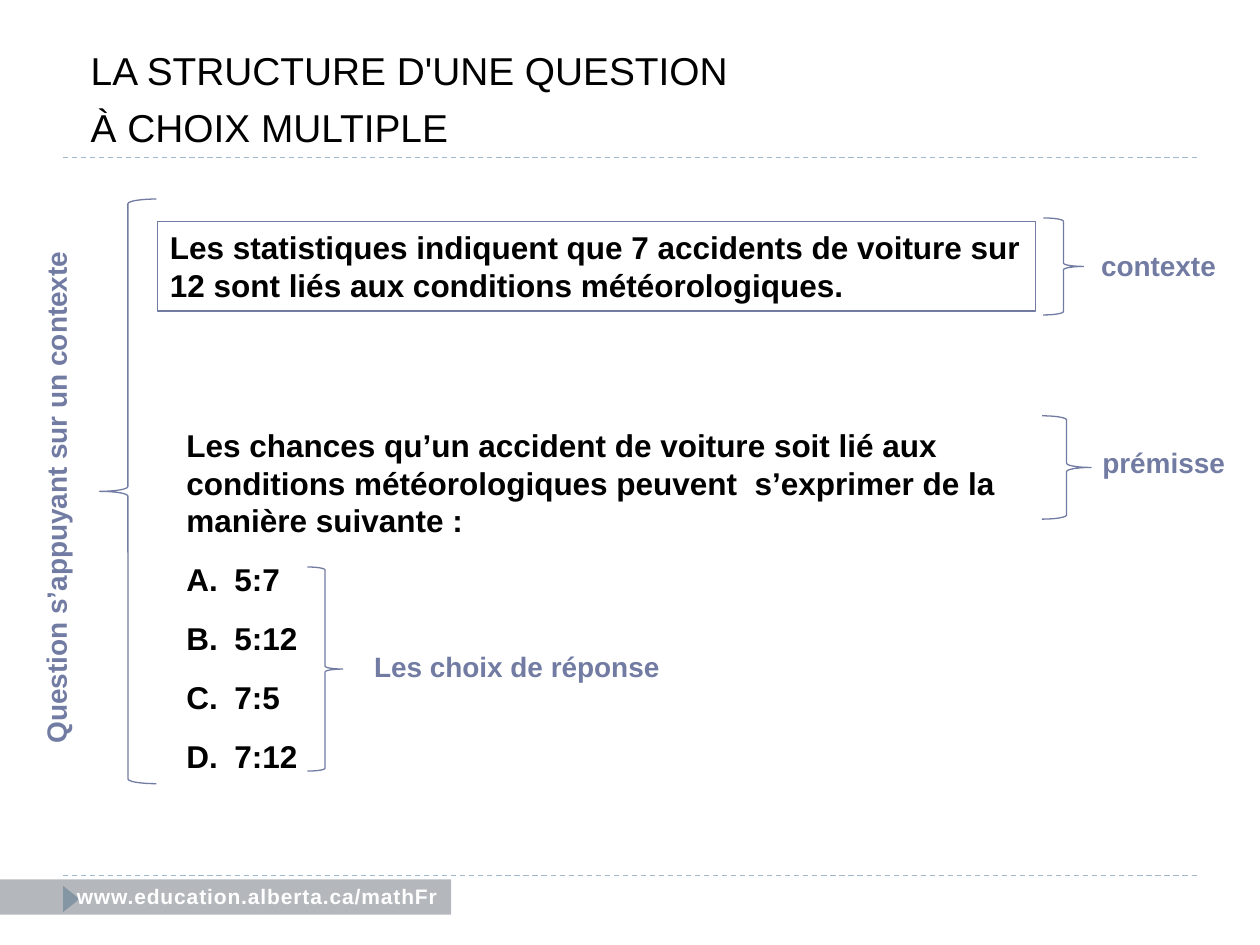
import pptx
import pptx.util
import pptx.dml.color
import pptx.enum.dml
import pptx.enum.shapes
import pptx.enum.text
import pptx.oxml
import pptx.oxml.ns

WIDTH, HEIGHT = 10, 7.5
COLORS = {"accent": "727CA3", "rule": "9FB8CD", "footer": "6A737B",
          "text": "000000", "white": "FFFFFF"}
SHAPES = pptx.enum.shapes.MSO_SHAPE
MARGIN = 0.05 * WIDTH
LIST_INDENT = 0.38


def inches(*lengths):
    return [pptx.util.Inches(length) for length in lengths]


def color(name):
    return pptx.dml.color.RGBColor.from_string(COLORS[name])


def add_xml(parent, tag, **attributes):
    child = pptx.oxml.parse_xml(f"<a:{tag} {pptx.oxml.ns.nsdecls('a')}/>")
    for key, value in attributes.items():
        child.set(key, value)
    parent.append(child)
    return child


def style(para, size, name, bold=True):
    para.alignment = pptx.enum.text.PP_ALIGN.LEFT
    font = para.font
    font.name, font.size, font.bold = "Arial", pptx.util.Pt(size), bold
    font.color.rgb = color(name)


def set_frame(frame, inset=None):
    frame.word_wrap = True
    frame.auto_size = pptx.enum.text.MSO_AUTO_SIZE.NONE
    frame.vertical_anchor = pptx.enum.text.MSO_ANCHOR.TOP
    if inset is not None:
        frame.margin_left = frame.margin_right = inset
        frame.margin_top = frame.margin_bottom = inset


def move(box, place):
    box.left, box.top, box.width, box.height = inches(*place)


def add_rule(page, y):
    rule = page.shapes.add_connector(
        pptx.enum.shapes.MSO_CONNECTOR.STRAIGHT,
        *inches(MARGIN, y, WIDTH - MARGIN, y))
    rule.line.color.rgb = color("rule")
    rule.line.width = pptx.util.Pt(0.75)
    rule.line.dash_style = pptx.enum.dml.MSO_LINE.DASH
    add_xml(rule._element.spPr, "effectLst")


def add_outline(page, kind, place):
    shape = page.shapes.add_shape(kind, *inches(*place))
    shape.shadow.inherit = False
    shape.fill.background()
    shape.line.color.rgb = color("accent")
    shape.line.width = pptx.util.Pt(0.75)
    return shape


def add_solid(page, kind, place, name):
    shape = page.shapes.add_shape(kind, *inches(*place))
    shape.shadow.inherit = False
    shape.fill.solid()
    shape.fill.fore_color.rgb = color(name)
    shape.line.fill.background()
    return shape


def add_label(page, text, place, size=16, name="accent", inset=None):
    box = page.shapes.add_textbox(*inches(*place))
    set_frame(box.text_frame, inset)
    box.text_frame.text = text
    style(box.text_frame.paragraphs[0], size, name)
    return box


def fill_title(box, lines):
    move(box, (0.72, 0.37, 9, 0.8))
    set_frame(box.text_frame, 0)
    box.text_frame.text = "\n".join(lines)
    for index, para in enumerate(box.text_frame.paragraphs):
        para.space_before = pptx.util.Pt(6 if index else 0)
        style(para, 22.2, "text", bold=False)


def fill_question(box, stem, choices):
    move(box, (1.38, 3.33, 6.81, 2.89))
    set_frame(box.text_frame)
    box.text_frame.text = "\n".join([stem] + choices)
    for index, para in enumerate(box.text_frame.paragraphs):
        para.space_before = pptx.util.Pt(0)
        para.space_after = pptx.util.Pt(12)
        properties = para._p.get_or_add_pPr()
        indent = pptx.util.Inches(LIST_INDENT) if index else 0
        properties.set("marL", str(indent))
        properties.set("indent", str(-indent))
        if index:
            add_xml(properties, "buFont", typeface="Arial")
            add_xml(properties, "buAutoNum", type="alphaUcPeriod")
        else:
            add_xml(properties, "buNone")
        style(para, 18, "text")


def add_footer(page):
    pointer = add_solid(page, SHAPES.ISOSCELES_TRIANGLE,
                        (0.46, 7.07, 0.21, 0.13), "rule")
    pointer.rotation = 90
    band = add_solid(page, SHAPES.RECTANGLE, (0, 6.98, 3.58, 0.28), "footer")
    tint = band.fill._xPr.find(".//" + pptx.oxml.ns.qn("a:srgbClr"))
    add_xml(tint, "alpha", val="50000")
    address = add_label(page, "www.education.alberta.ca/mathFr",
                        (0.61, 7.01, 2.97, 0.2), 12, "white", inset=0)
    span = address.text_frame.paragraphs[0].runs[0]
    span._r.get_or_add_rPr().set("spc", "50")


def main():
    deck = pptx.Presentation()
    deck.slide_width, deck.slide_height = inches(WIDTH, HEIGHT)
    page = deck.slides.add_slide(deck.slide_layouts[1])

    # Rules and footer
    for y in (1.25, 6.95):
        add_rule(page, y)
    add_footer(page)

    # Title and question
    fill_title(page.shapes.title,
               ["LA STRUCTURE D'UNE QUESTION", "À CHOIX MULTIPLE"])
    fill_question(
        page.placeholders[1],
        "Les chances qu’un accident de voiture soit lié aux conditions "
        "météorologiques peuvent  s’exprimer de la manière suivante :",
        ["5:7", "5:12", "7:5", "7:12"])

    # Context statement
    context = add_outline(page, SHAPES.RECTANGLE, (1.25, 1.76, 6.97, 0.71))
    set_frame(context.text_frame)
    context.text_frame.text = (
        "Les statistiques indiquent que 7 accidents de voiture sur 12 "
        "sont liés aux conditions météorologiques.")
    style(context.text_frame.paragraphs[0], 18, "text")

    # Braces with the names of the parts
    for text, brace, place in (
            ("contexte", (8.28, 1.73, 0.32, 0.77), (8.64, 1.92, 1.36, 0.37)),
            ("prémisse", (8.27, 3.3, 0.39, 0.82), (8.65, 3.49, 1.22, 0.37)),
            ("Les choix de réponse", (2.44, 4.5, 0.28, 1.62),
             (2.87, 5.11, 3.25, 0.37))):
        add_outline(page, SHAPES.RIGHT_BRACE, brace)
        add_label(page, text, place)
    add_outline(page, SHAPES.LEFT_BRACE, (0.79, 1.58, 0.45, 4.64))
    whole = add_label(page, "Question s’appuyant sur un contexte",
                      (0.26, 1.89, 0.47, 4.11))
    whole.text_frame._txBody.bodyPr.set("vert", "vert270")

    deck.save("out.pptx")


if __name__ == "__main__":
    main()
